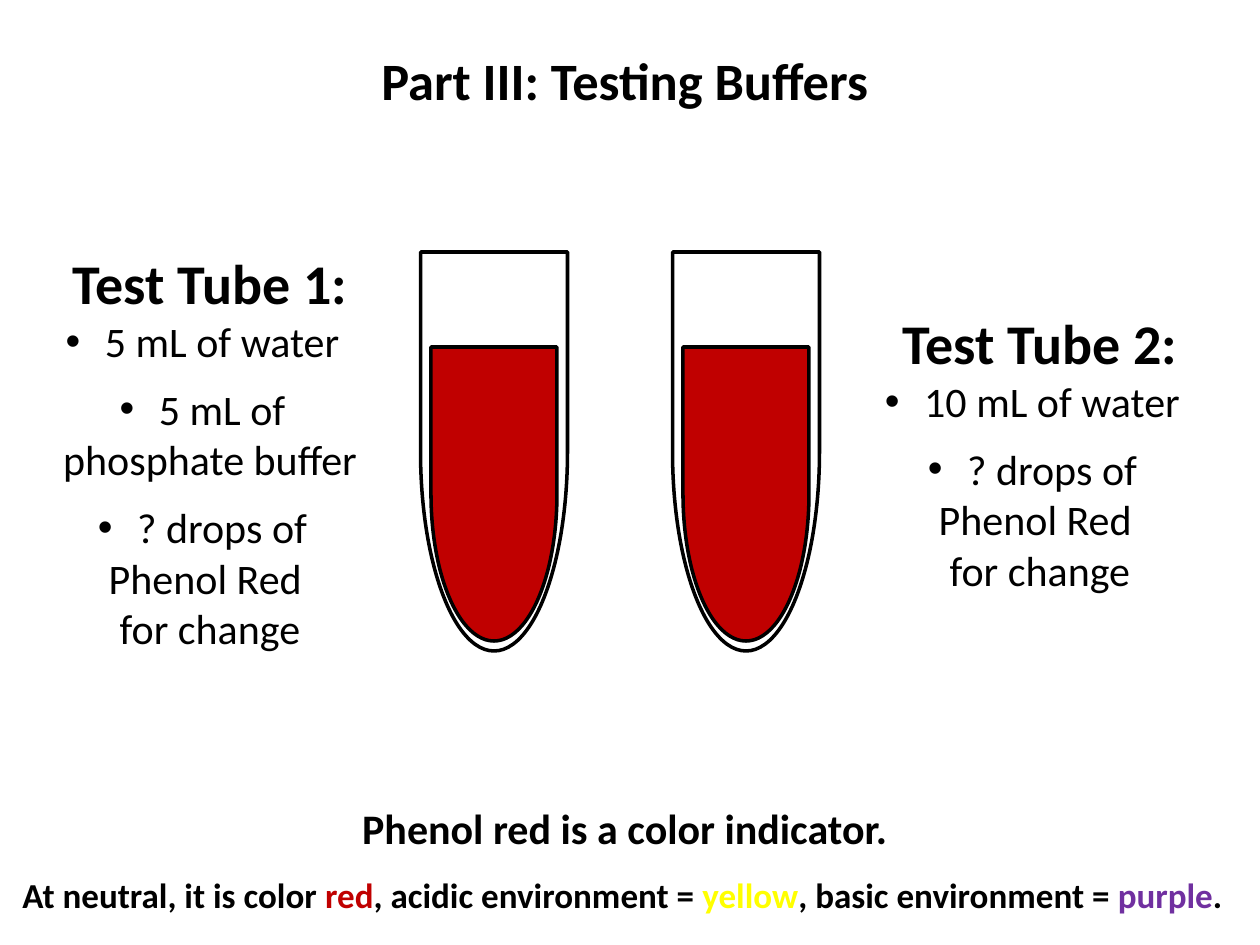
import pptx
import pptx.dml.color
import pptx.enum.shapes
import pptx.enum.text
import pptx.util
from lxml import etree

PX_PER_INCH = 126
FONT = "Calibri"
BLACK, WHITE, RED, YELLOW, PURPLE = "000000", "FFFFFF", "C00000", "FFFF00", "7030A0"
CENTER = pptx.enum.text.PP_ALIGN.CENTER
LEFT = pptx.enum.text.PP_ALIGN.LEFT


def px(length):
    return pptx.util.Emu(round(length * 914400 / PX_PER_INCH))


def color(value):
    return pptx.dml.color.RGBColor.from_string(value)


def add_text_box(slide, left, top, width, height):
    frame = slide.shapes.add_textbox(px(left), px(top), px(width), px(height)).text_frame
    frame.word_wrap = True
    frame.auto_size = pptx.enum.text.MSO_AUTO_SIZE.SHAPE_TO_FIT_TEXT
    return frame


def add_line(frame, runs, size, bold=False, align=CENTER, gap=0, bullet=False):
    """Add one paragraph; runs are (text, colour) pairs."""
    first = frame.paragraphs[0]
    line = frame.add_paragraph() if first.runs else first
    line.alignment = align
    line.space_before = pptx.util.Pt(gap)
    if bullet:
        props = line._p.get_or_add_pPr()
        for tag, key, value in (("buFont", "typeface", "Arial"), ("buChar", "char", "•")):
            etree.SubElement(props, pptx.oxml.ns.qn("a:" + tag)).set(key, value)
    for text, tint in runs:
        run = line.add_run()
        run.text = text
        run.font.name = FONT
        run.font.size = pptx.util.Pt(size)
        run.font.bold = bold
        run.font.color.rgb = color(tint)


def add_round_bottom(slide, center_x, top, width, height, fill):
    """A delay shape turned a quarter, so that its round end points down."""
    left = center_x - height / 2
    unturned_top = top + (height - width) / 2
    part = slide.shapes.add_shape(
        pptx.enum.shapes.MSO_SHAPE.FLOWCHART_DELAY,
        px(left), px(unturned_top), px(height), px(width))
    part.rotation = 90
    part.shadow.inherit = False
    part.fill.solid()
    part.fill.fore_color.rgb = color(fill)
    part.line.color.rgb = color(BLACK)
    part.line.width = pptx.util.Pt(2)


def add_test_tube(slide, center_x):
    add_round_bottom(slide, center_x, 252, 147, 399, WHITE)
    add_round_bottom(slide, center_x, 347, 126, 294, RED)


def add_contents(slide, left, top, height, heading, items):
    contents = add_text_box(slide, left, top, 336, height)
    add_line(contents, [(heading, BLACK)], 32, bold=True)
    for index, item in enumerate(items):
        add_line(contents, [(item, BLACK)], 24, gap=10 if index else 0, bullet=True)
    add_line(contents, [("for change", BLACK)], 24)


def main():
    deck = pptx.Presentation()
    deck.slide_width, deck.slide_height = px(1260), px(945)
    slide = deck.slides.add_slide(deck.slide_layouts[6])

    # Title
    title = add_text_box(slide, 42, 42, 1166, 77)
    add_line(title, [("Part III: Testing Buffers", BLACK)], 30, bold=True)

    # Test tubes
    for center_x in (494, 746):
        add_test_tube(slide, center_x)

    # What each tube holds
    drops = " ? drops of Phenol Red "
    add_contents(slide, 42, 242, 420, "Test Tube 1:",
                 [" 5 mL of water", " 5 mL of phosphate buffer", drops])
    add_contents(slide, 872, 302, 301, "Test Tube 2:", [" 10 mL of water", drops])

    # Indicator colours
    indicator = add_text_box(slide, 10, 796, 1239, 127)
    add_line(indicator, [("Phenol red is a color indicator. ", BLACK)], 24, bold=True)
    add_line(indicator, [
        ("At neutral, it is color ", BLACK), ("red", RED),
        (", acidic environment = ", BLACK), ("yellow", YELLOW),
        (", basic environment = ", BLACK), ("purple", PURPLE), (".", BLACK),
    ], 20, bold=True, align=LEFT, gap=12)

    deck.save("out.pptx")


if __name__ == "__main__":
    main()
